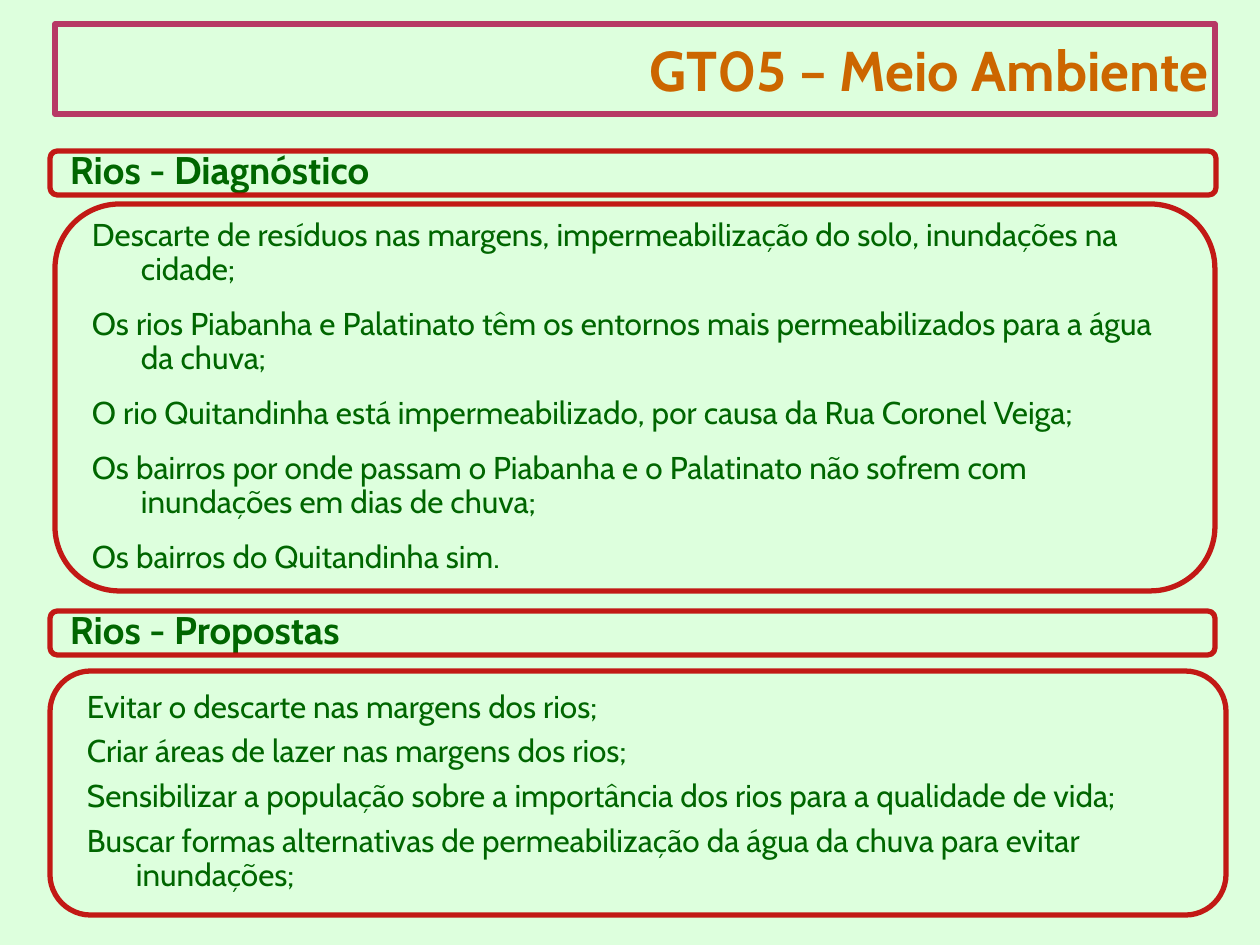
from lxml import etree
from pptx import Presentation
from pptx.dml.color import RGBColor
from pptx.enum.shapes import MSO_SHAPE
from pptx.enum.text import MSO_ANCHOR, MSO_AUTO_SIZE, PP_ALIGN
from pptx.oxml.ns import qn
from pptx.util import Pt

ROUNDED = MSO_SHAPE.ROUNDED_RECTANGLE
MIDDLE = MSO_ANCHOR.MIDDLE
NO_AUTOFIT = MSO_AUTO_SIZE.NONE
LEFT, RIGHT = PP_ALIGN.LEFT, PP_ALIGN.RIGHT

# Content
TITLE = "GT05 – Meio Ambiente"
TITLE_BOX = (55, 24, 1160, 90)
SECTIONS = [
    {
        "heading": "Rios - Diagnóstico",
        "heading_frame": (50, 151, 1166, 44),
        "heading_box": (55, 154, 1137, 37),
        "items": [
            "Descarte de resíduos nas margens, impermeabilização do solo, inundações na cidade;",
            "Os rios Piabanha e Palatinato têm os entornos mais permeabilizados para a água da chuva;",
            "O rio Quitandinha está impermeabilizado, por causa da Rua Coronel Veiga;",
            "Os bairros por onde passam o Piabanha e o Palatinato não sofrem com inundações em dias de chuva;",
            "Os bairros do Quitandinha sim.",
        ],
        "list_frame": (55, 204, 1160, 387),
        "list_box": (77, 204, 1113, 387),
        "space_after": 12,
    },
    {
        "heading": "Rios - Propostas",
        "heading_frame": (50, 611, 1165, 44),
        "heading_box": (55, 614, 1137, 37),
        "items": [
            "Evitar o descarte nas margens dos rios;",
            "Criar áreas de lazer nas margens dos rios;",
            "Sensibilizar a população sobre a importância dos rios para a qualidade de vida;",
            "Buscar formas alternativas de permeabilização da água da chuva para evitar inundações;",
        ],
        "list_frame": (50, 671, 1176, 244),
        "list_box": (72, 679, 1128, 226),
        "space_after": 6,
    },
]

# Style
FONT = "Cabin"
COLORS = {
    "background": "DDFFDD",
    "title": "CC6600",
    "title_line": "B73965",
    "frame": "C00000",
    "text": "006600",
}
HANGING = 49
COMPARISON_LAYOUT = 4


def px(value):
    return round(value * 914400 / 126)


def color(name):
    return RGBColor.from_string(COLORS[name])


def place(shape, box):
    shape.left, shape.top, shape.width, shape.height = map(px, box)


def fill_text(shape, box, lines, size, color_name, bold=False, align=LEFT,
              insets=(15, 8), hanging=0, line_spacing=0.9, space_after=0):
    place(shape, box)
    frame = shape.text_frame
    frame.word_wrap = True
    frame.auto_size = NO_AUTOFIT
    frame.vertical_anchor = MIDDLE
    frame.margin_left = frame.margin_right = px(insets[0])
    frame.margin_top = frame.margin_bottom = px(insets[1])
    frame.text = "\n".join(lines)
    for paragraph in frame.paragraphs:
        properties = paragraph._p.get_or_add_pPr()
        properties.set("marL", str(px(hanging)))
        properties.set("indent", str(-px(hanging)))
        etree.SubElement(properties, qn("a:buNone"))
        paragraph.alignment = align
        paragraph.line_spacing = line_spacing
        paragraph.space_before = Pt(0)
        paragraph.space_after = Pt(space_after)
        for run in paragraph.runs:
            run.font.name = FONT
            run.font.size = Pt(size)
            run.font.bold = bold
            run.font.color.rgb = color(color_name)


def add_frame(slide, box):
    shape = slide.shapes.add_shape(ROUNDED, *map(px, box))
    shape.shadow.inherit = False
    shape.fill.background()
    shape.line.color.rgb = color("frame")
    shape.line.width = Pt(3)
    line_color = shape.line.fill._xPr.find(".//" + qn("a:srgbClr"))
    etree.SubElement(line_color, qn("a:alpha"), val="90000")


def main():
    presentation = Presentation()
    presentation.slide_width, presentation.slide_height = px(1260), px(945)
    slide = presentation.slides.add_slide(presentation.slide_layouts[COMPARISON_LAYOUT])
    slide.background.fill.solid()
    slide.background.fill.fore_color.rgb = color("background")

    # Title
    title, *bodies = slide.placeholders
    fill_text(title, TITLE_BOX, [TITLE], 32, "title", bold=True, align=RIGHT,
              insets=(6, 0), line_spacing=1.0)
    title.line.color.rgb = color("title_line")
    title.line.width = Pt(3)

    # Headings and lists, each in a rounded frame
    for section, heading, body in zip(SECTIONS, bodies[::2], bodies[1::2]):
        add_frame(slide, section["heading_frame"])
        fill_text(heading, section["heading_box"], [section["heading"]], 22, "text", bold=True)
        add_frame(slide, section["list_frame"])
        fill_text(body, section["list_box"], section["items"], 18, "text",
                  hanging=HANGING, space_after=section["space_after"])

    presentation.save("out.pptx")


if __name__ == "__main__":
    main()
